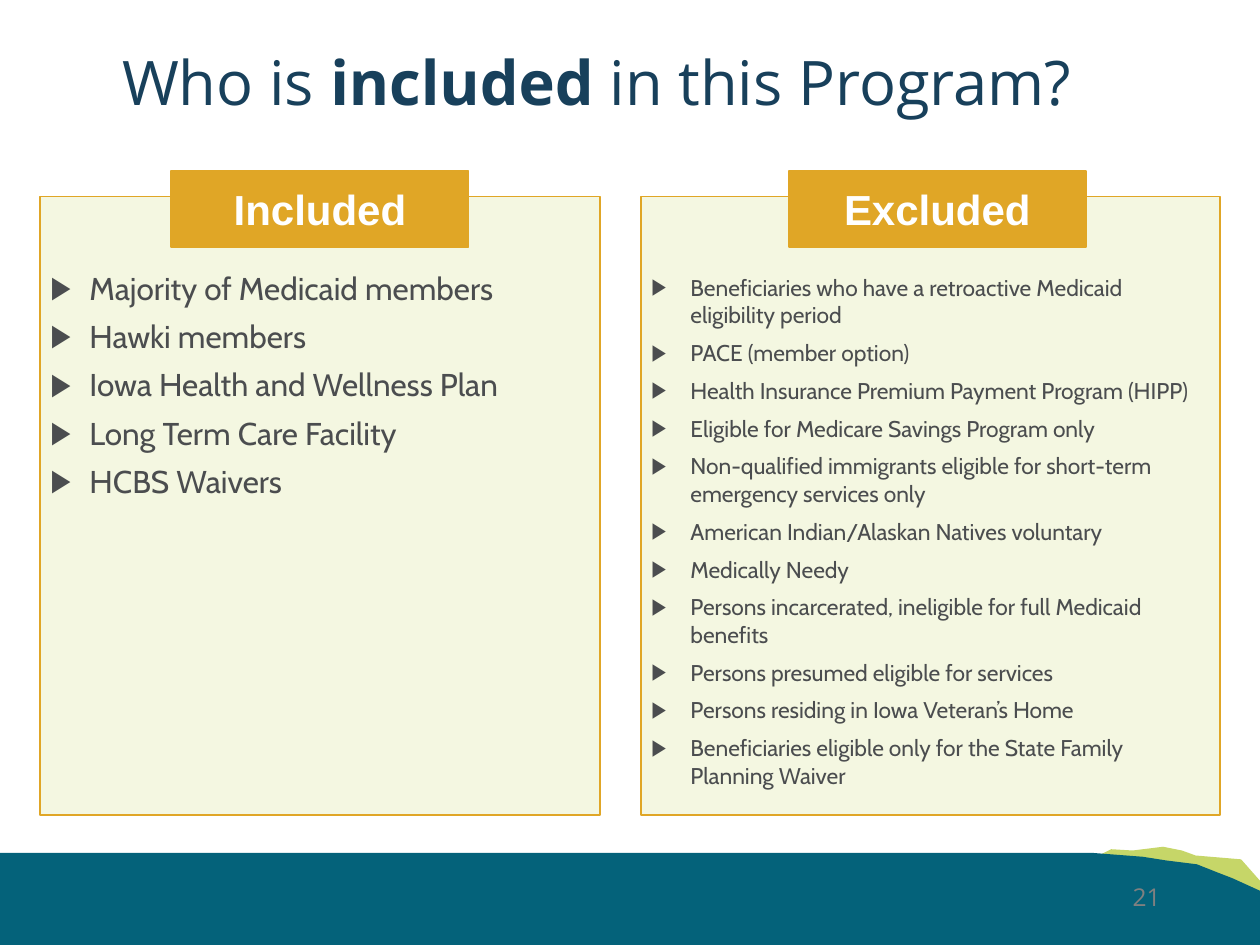
from lxml import etree
from pptx import Presentation
from pptx.dml.color import RGBColor
from pptx.enum.shapes import MSO_SHAPE as Shape
from pptx.enum.text import MSO_ANCHOR as Anchor, MSO_AUTO_SIZE as AutoSize, PP_ALIGN as Align
from pptx.oxml.ns import qn
from pptx.util import Inches, Pt

COLORS = {
    "navy": "18405B",
    "teal": "04627A",
    "lime": "C6D668",
    "gold": "E0A626",
    "cream": "F4F7E1",
    "text": "4B4D4F",
    "gray": "808080",
    "white": "FFFFFF",
}

INCLUDED = [
    "Majority of Medicaid members",
    "Hawki members",
    "Iowa Health and Wellness Plan",
    "Long Term Care Facility",
    "HCBS Waivers",
]
EXCLUDED = [
    "Beneficiaries who have a retroactive Medicaid eligibility period",
    "PACE (member option)",
    "Health Insurance Premium Payment Program (HIPP)",
    "Eligible for Medicare Savings Program only",
    "Non-qualified immigrants eligible for short-term emergency services only",
    "American Indian/Alaskan Natives voluntary",
    "Medically Needy",
    "Persons incarcerated, ineligible for full Medicaid benefits",
    "Persons presumed eligible for services",
    "Persons residing in Iowa Veteran’s Home",
    "Beneficiaries eligible only for the State Family Planning Waiver",
]

# Bottom wave, as corner points in inches
LIME_HILL = [(8.82, 6.74), (8.62, 6.84), (10, 7.11), (10, 6.99), (9.85, 6.82),
             (9.49, 6.79), (9.38, 6.75), (9.23, 6.72), (8.99, 6.75)]
TEAL_BAND = [(0, 6.77), (8.68, 6.77), (9.07, 6.8), (9.26, 6.83), (9.5, 6.86),
             (9.65, 6.92), (9.78, 6.97), (10, 7.07), (10, 7.5), (0, 7.5)]

PANEL_TOP, PANEL_HEIGHT = 1.56, 4.91
TAB_TOP, TAB_WIDTH, TAB_HEIGHT = 1.36, 2.36, 0.6
LIST_TOP = TAB_TOP + TAB_HEIGHT


def color(name):
    return RGBColor.from_string(COLORS[name])


class SlideBuilder:
    """Holds the shared style and the current page."""

    heading_font, body_font, tab_font = "Open Sans", "Cabin", "Arial"

    def __init__(self, page):
        self.page = page
        self.shapes = page.shapes

    def span(self, para, text, font, size, fill, bold=False):
        span = para.add_run()
        span.text = text
        span.font.name, span.font.size, span.font.bold = font, Pt(size), bold
        span.font.color.rgb = color(fill)

    def paint(self, shape, fill, line=None):
        shape.shadow.inherit = False
        shape.fill.solid()
        shape.fill.fore_color.rgb = color(fill)
        if line:
            shape.line.color.rgb = color(line)
            shape.line.width = Pt(1)
        else:
            shape.line.fill.background()

    def outline(self, points, fill):
        corners = [(Inches(x), Inches(y)) for x, y in points]
        builder = self.shapes.build_freeform(*corners[0])
        builder.add_line_segments(corners[1:], close=True)
        self.paint(builder.convert_to_shape(), fill)

    def rectangle(self, left, top, width, height, fill):
        box = self.shapes.add_shape(Shape.RECTANGLE, Inches(left), Inches(top),
                                    Inches(width), Inches(height))
        self.paint(box, fill, "gold")
        return box

    def tab(self, left, text):
        box = self.rectangle(left, TAB_TOP, TAB_WIDTH, TAB_HEIGHT, "gold")
        box.text_frame.vertical_anchor = Anchor.MIDDLE
        para = box.text_frame.paragraphs[0]
        para.alignment = Align.CENTER
        self.span(para, text, self.tab_font, 24, "white", bold=True)

    def placeholder(self, index, left, top, width, height):
        box = next(item for item in self.page.placeholders
                   if item.placeholder_format.idx == index)
        box.left, box.top = Inches(left), Inches(top)
        box.width, box.height = Inches(width), Inches(height)
        frame = box.text_frame
        frame.word_wrap, frame.auto_size = True, AutoSize.NONE
        frame.vertical_anchor = Anchor.MIDDLE
        # Bring the placeholder in front of the shapes drawn so far
        box.element.getparent().append(box.element)
        return frame

    def title(self, parts):
        para = self.placeholder(0, 0.87, 0.1, 9.26, 1.16).paragraphs[0]
        para.alignment, para.line_spacing = Align.LEFT, 0.9
        for text, bold in parts:
            self.span(para, text, self.heading_font, 35.1, "navy", bold)

    def bullets(self, index, left, width, height, items, size):
        frame = self.placeholder(index, left, LIST_TOP, width, height)
        frame.margin_left, frame.margin_right = Inches(0.08), Inches(0.12)
        frame.margin_top = frame.margin_bottom = Inches(0.06)
        for number, item in enumerate(items):
            para = frame.add_paragraph() if number else frame.paragraphs[0]
            para.space_before = Pt(6 if number else 0)
            properties = para._p.get_or_add_pPr()
            properties.set("marL", str(Inches(0.31)))
            properties.set("indent", str(-Inches(0.31)))
            etree.SubElement(properties, qn("a:buChar")).set("char", "▶")
            self.span(para, item, self.body_font, size, "text")

    def page_number(self, text):
        box = self.shapes.add_textbox(Inches(7.06), Inches(6.95), Inches(2.25), Inches(0.4))
        box.text_frame.word_wrap = True
        para = box.text_frame.paragraphs[0]
        para.alignment = Align.RIGHT
        self.span(para, text, self.heading_font, 14, "gray")


def main():
    deck = Presentation()
    deck.slide_width, deck.slide_height = Inches(10), Inches(7.5)
    two_content = deck.slide_layouts[3]
    slide = SlideBuilder(deck.slides.add_slide(two_content))

    # Bottom wave
    slide.outline(LIME_HILL, "lime")
    slide.outline(TEAL_BAND, "teal")

    # Panels: placeholder, left, width, list height, tab left, heading, items, size
    columns = [
        (1, 0.32, 4.44, 2.18, 1.36, "Included", INCLUDED, 18),
        (2, 5.09, 4.59, 4.51, 6.26, "Excluded", EXCLUDED, 13),
    ]
    for index, left, width, height, tab_left, heading, items, size in columns:
        slide.rectangle(left, PANEL_TOP, width, PANEL_HEIGHT, "cream")
        slide.bullets(index, left, width, height, items, size)
        slide.tab(tab_left, heading)

    # Title and page number
    slide.title([("Who is ", False), ("included", True), (" in this Program?", False)])
    slide.page_number("21")

    deck.save("out.pptx")


if __name__ == "__main__":
    main()
